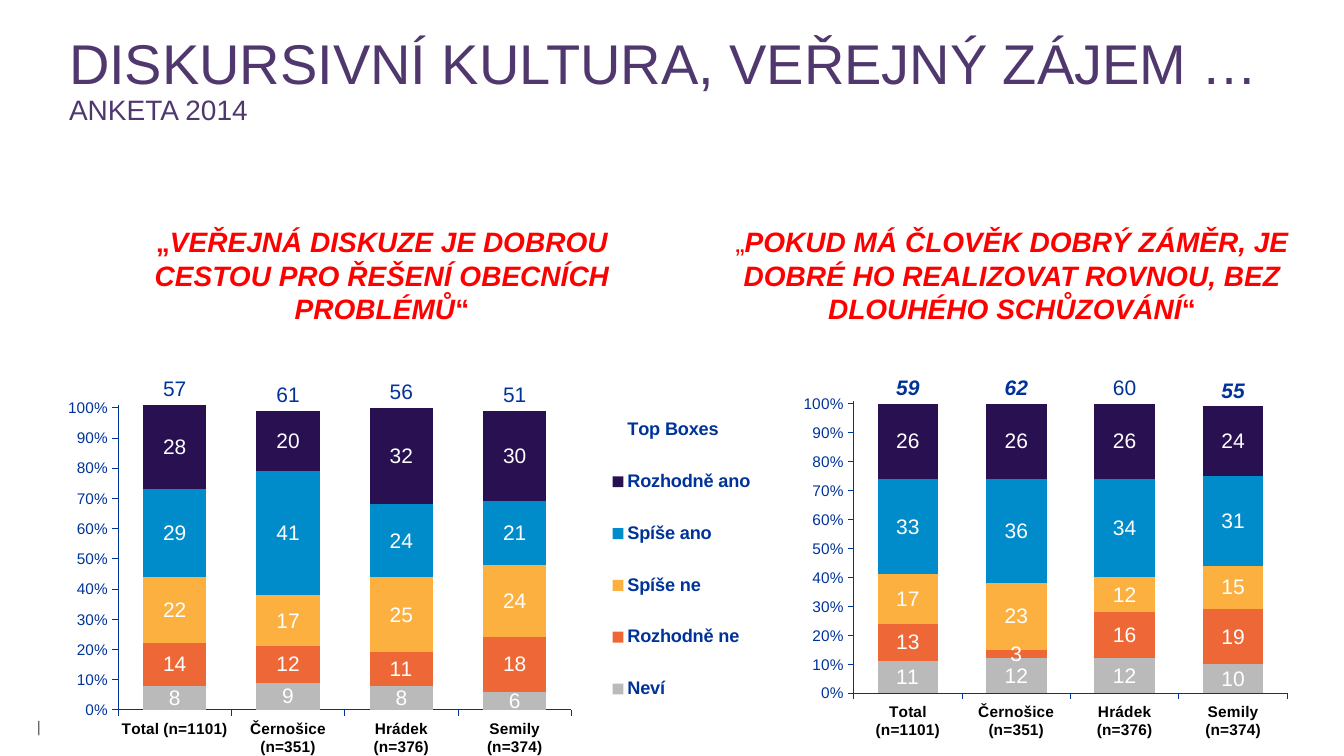
from lxml import etree
from pptx import Presentation
from pptx import util as u
from pptx.chart.data import CategoryChartData
from pptx.dml.color import RGBColor
from pptx.enum import chart as charts
from pptx.enum import text
from pptx.oxml import parse_xml
from pptx.oxml.ns import nsdecls

PX = 12192000 / 1344
FONT = "Arial"
PURPLE = RGBColor(0x50, 0x38, 0x6F)
RED = RGBColor(0xFF, 0x00, 0x00)
BLUE = RGBColor(0x00, 0x33, 0x99)
GREY = RGBColor(0x57, 0x57, 0x56)
BLACK = RGBColor(0, 0, 0)
WHITE = RGBColor(0xFF, 0xFF, 0xFF)
ANSWER_COLOURS = [RGBColor(0xBA, 0xBA, 0xBA), RGBColor(0xED, 0x67, 0x37),
                  RGBColor(0xFB, 0xB0, 0x40), RGBColor(0x00, 0x8B, 0xCA),
                  RGBColor(0x28, 0x10, 0x51)]

TOWNS = ["Total (n=1101)", "Černošice (n=351)", "Hrádek (n=376)", "Semily (n=374)"]
DISCUSSION = {
    "Neví": [8, 9, 8, 6],
    "Rozhodně ne": [14, 12, 11, 18],
    "Spíše ne": [22, 17, 25, 24],
    "Spíše ano": [29, 41, 24, 21],
    "Rozhodně ano": [28, 20, 32, 30],
    "Top Boxes": [56, 62, 55, 52],
}
INTENT_VALUES = [[11, 12, 12, 10], [13, 3, 16, 19], [17, 23, 12, 15],
                 [33, 36, 34, 31], [26, 26, 26, 24], [59, 62, 61, 55]]
INTENT = {f"Series {n}": values for n, values in enumerate(INTENT_VALUES, 1)}


def px(*lengths):
    return [round(length * PX) for length in lengths]


def style(font, size, colour, **formats):
    for name, value in {"name": FONT, "size": u.Pt(size), **formats}.items():
        setattr(font, name, value)
    font.color.rgb = colour


def set_layout(element, x, y, width, height, inner=False):
    """Give a chart part a fixed place, in fractions of the chart."""
    for old in element.findall("{*}layout"):
        element.remove(old)
    layout = parse_xml(f'<c:layout {nsdecls("c")}><c:manualLayout/></c:layout>')
    values = {"layoutTarget": "inner"} if inner else {}
    values.update(xMode="edge", yMode="edge", x=x, y=y, w=width, h=height)
    for tag, value in values.items():
        qualified = "{%s}%s" % (layout.nsmap["c"], tag)
        etree.SubElement(layout[0], qualified).set("val", str(value))
    if inner:
        element.insert(0, layout)
    else:
        element.find("{*}legendPos").addnext(layout)


class SurveySlide:
    def __init__(self, deck):
        self.page = deck.slides.add_slide(deck.slide_layouts[4])
        for holder in list(self.page.placeholders):
            if holder.placeholder_format.idx not in (0, 1, 3):
                holder.element.getparent().remove(holder.element)

    def frame(self, box, place, anchor, inset=0):
        box.left, box.top, box.width, box.height = px(*place)
        formats = {"auto_size": text.MSO_AUTO_SIZE.NONE, "word_wrap": True,
                   "vertical_anchor": anchor, "margin_left": u.Inches(inset),
                   "margin_right": u.Inches(inset), "margin_top": 0, "margin_bottom": 0}
        for name, value in formats.items():
            setattr(box.text_frame, name, value)
        return box.text_frame.paragraphs[0]

    def span(self, para, words, size, colour, **formats):
        span = para.add_run()
        span.text = words
        style(span.font, size, colour, **formats)

    def title(self, heading, source):
        para = self.frame(self.page.shapes.title, (69, 36, 1210, 126), text.MSO_ANCHOR.TOP)
        para.alignment = text.PP_ALIGN.LEFT
        para.line_spacing = 0.9
        self.span(para, heading, 40, PURPLE, bold=False)
        para.add_line_break()
        self.span(para, source, 20, PURPLE, bold=False)

    def statement(self, idx, left, words, bold_quote):
        box = self.page.placeholders[idx]
        para = self.frame(box, (left, 224, 594, 102), text.MSO_ANCHOR.MIDDLE, 0.1)
        para.alignment = text.PP_ALIGN.CENTER
        para.space_before = u.Pt(10)
        self.span(para, "„", 20, RED, bold=bold_quote, italic=False)
        self.span(para, words, 20, RED, bold=True, italic=True)
        self.span(para, "“", 20, RED, bold=True, italic=False)

    def footer_mark(self):
        box = self.page.shapes.add_textbox(0, 0, 0, 0)
        para = self.frame(box, (37, 717, 4, 19), text.MSO_ANCHOR.TOP)
        box.text_frame.word_wrap = False
        self.span(para, "|", 11, GREY)

    def axis(self, axis, colour, bold):
        axis.has_major_gridlines = False
        axis.major_tick_mark = charts.XL_TICK_MARK.OUTSIDE
        axis.minor_tick_mark = charts.XL_TICK_MARK.NONE
        axis.format.line.color.rgb = BLUE
        axis.format.line.width = u.Pt(0.75)
        style(axis.tick_labels.font, 11, colour, bold=bold)

    def labels(self, series, colour, **formats):
        labels = series.data_labels
        labels.show_value = True
        labels.number_format = "#,##0"
        labels.number_format_is_linked = False
        style(labels.font, 15, colour, **formats)
        return labels

    def chart(self, place, answers, plot_place, top_labels, **top_formats):
        """Stack the answers; top_labels replaces values over some columns."""
        data = CategoryChartData()
        data.categories = TOWNS
        for name, values in answers.items():
            data.add_series(name, values)
        kind = charts.XL_CHART_TYPE.COLUMN_STACKED
        chart = self.page.shapes.add_chart(kind, *px(*place), data).chart
        chart.has_title = chart.has_legend = False
        style(chart.font, 18, BLACK)
        self.axis(chart.category_axis, BLACK, True)
        self.axis(chart.value_axis, BLUE, False)
        scale = {"minimum_scale": 0, "maximum_scale": 101, "major_unit": 10}
        for name, value in scale.items():
            setattr(chart.value_axis, name, value)
        ticks = chart.value_axis.tick_labels
        ticks.number_format = '#,##0"%";\\-#,##0'
        ticks.number_format_is_linked = False

        plot = chart.plots[0]
        plot.gap_width, plot.overlap, plot.vary_by_categories = 79, 100, False
        *bars, top = plot.series
        for series, colour in zip(bars, ANSWER_COLOURS):
            series.format.fill.solid()
            series.format.fill.fore_color.rgb = colour
            self.labels(series, WHITE, bold=False)
        top.format.fill.background()
        base = charts.XL_LABEL_POSITION.INSIDE_BASE
        self.labels(top, BLUE, **top_formats).position = base
        for index, words in top_labels.items():
            label = top.points[index].data_label
            para = label.text_frame.paragraphs[0]
            self.span(para, words, 15, BLUE, bold=False, italic=False)
            label.position = base
        set_layout(chart.element.find(".//{*}plotArea"), *plot_place, inner=True)
        return chart

    def legend(self, chart, place):
        chart.has_legend = True
        chart.legend.position = charts.XL_LEGEND_POSITION.RIGHT
        chart.legend.include_in_layout = False
        style(chart.legend.font, 13, BLUE, bold=True)
        set_layout(chart.element.find(".//{*}legend"), *place)


def main():
    deck = Presentation()
    deck.slide_width, deck.slide_height = px(1344, 756)
    slide = SurveySlide(deck)
    slide.footer_mark()
    slide.title("DISKURSIVNÍ KULTURA, VEŘEJNÝ ZÁJEM …", "ANKETA 2014")
    slide.statement(1, 85, "VEŘEJNÁ DISKUZE JE DOBROU CESTOU PRO ŘEŠENÍ "
                    "OBECNÍCH PROBLÉMŮ", True)
    slide.statement(3, 715, "POKUD MÁ ČLOVĚK DOBRÝ ZÁMĚR, JE DOBRÉ HO "
                    "REALIZOVAT ROVNOU, BEZ DLOUHÉHO SCHŮZOVÁNÍ", False)
    discussion = slide.chart((68, 338, 689, 418), DISCUSSION, (0.07, 0.16, 0.66, 0.73),
                             dict(enumerate(["57", "61", "56", "51"])), bold=True)
    slide.legend(discussion, (0.78, 0.12, 0.22, 0.82))
    slide.chart((729, 338, 594, 418), INTENT, (0.21, 0.15, 0.73, 0.7),
                {2: "60"}, bold=True, italic=True)
    deck.save("out.pptx")


if __name__ == "__main__":
    main()
